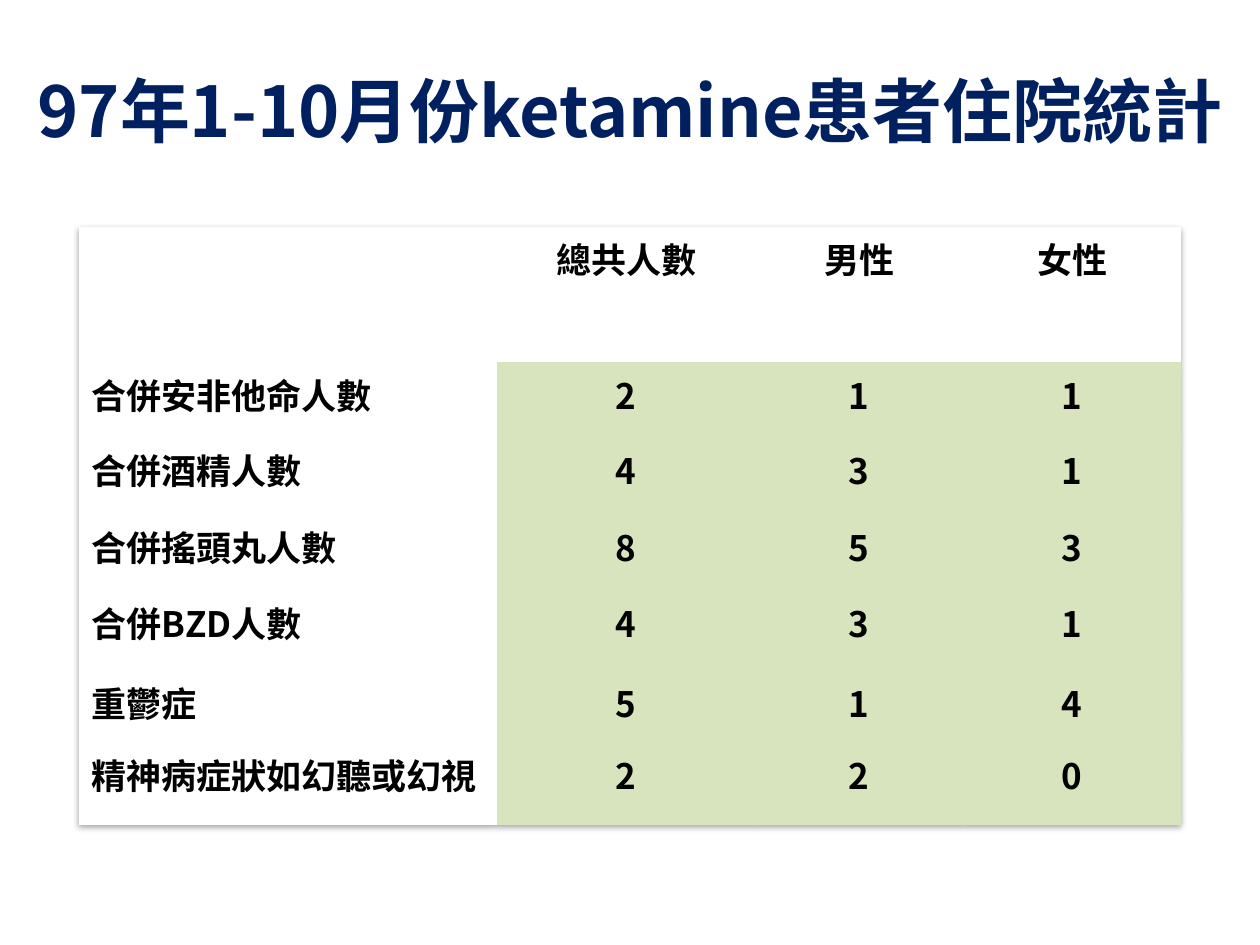
from lxml import etree
from pptx import Presentation
from pptx.dml.color import RGBColor
from pptx.enum.text import MSO_ANCHOR, PP_ALIGN
from pptx.oxml import parse_xml
from pptx.oxml.ns import nsdecls, qn
from pptx.util import Pt

CENTER, LEFT = PP_ALIGN.CENTER, PP_ALIGN.LEFT
MIDDLE = MSO_ANCHOR.MIDDLE
FONT = "Noto Sans CJK SC"
NAVY, BLACK, WHITE, GREEN = "002060", "000000", "FFFFFF", "D7E4BD"
COLUMN_WIDTHS = [239, 147.6, 118.8, 124.6]
ROW_HEIGHTS = [77.4, 43.2, 43.9, 43.2, 46.1, 41, 46.8]
STATISTICS = [
    ["", "總共人數", "男性", "女性"],
    ["合併安非他命人數", "2", "1", "1"],
    ["合併酒精人數", "4", "3", "1"],
    ["合併搖頭丸人數", "8", "5", "3"],
    ["合併BZD人數", "4", "3", "1"],
    ["重鬱症", "5", "1", "4"],
    ["精神病症狀如幻聽或幻視", "2", "2", "0"],
]


def color(value):
    """Turn a hex string into a colour."""
    return RGBColor.from_string(value)


def write(para, text, size, shade, align):
    """Write bold text in the slide font, for Latin and East Asian letters."""
    para.text = text
    para.alignment = align
    font = para.font
    font.name, font.size, font.bold = FONT, Pt(size), True
    font.color.rgb = color(shade)
    latin = para._p.pPr.find(qn("a:defRPr")).find(qn("a:latin"))
    east_asian = etree.Element(qn("a:ea"), typeface=FONT)
    latin.addnext(east_asian)


def add_title(page, text):
    """Add the centred title across the full slide width."""
    box = page.shapes.add_textbox(Pt(0), Pt(21.6), Pt(720), Pt(90))
    frame = box.text_frame
    frame.word_wrap = True
    frame.vertical_anchor = MIDDLE
    para = frame.paragraphs[0]
    para.line_spacing = 0.83
    write(para, text, 40, NAVY, CENTER)


def add_shadow(table):
    """Give the table a soft shadow below it."""
    shadow = parse_xml(
        f'<a:effectLst {nsdecls("a")}>'
        '<a:outerShdw blurRad="40000" dist="23000" dir="5400000" rotWithShape="0">'
        '<a:srgbClr val="000000"><a:alpha val="35000"/></a:srgbClr>'
        '</a:outerShdw></a:effectLst>'
    )
    table._tbl.tblPr.insert(0, shadow)


def add_statistics(page, rows):
    """Add the table with white headings and green figures."""
    table = page.shapes.add_table(
        len(rows), len(rows[0]), Pt(45), Pt(129.6),
        Pt(sum(COLUMN_WIDTHS)), Pt(sum(ROW_HEIGHTS)),
    ).table
    for column, width in zip(table.columns, COLUMN_WIDTHS):
        column.width = Pt(width)
    for row, height in zip(table.rows, ROW_HEIGHTS):
        row.height = Pt(height)
    for i, values in enumerate(rows):
        for j, value in enumerate(values):
            cell = table.cell(i, j)
            cell.fill.solid()
            cell.fill.fore_color.rgb = color(GREEN if i and j else WHITE)
            write(cell.text_frame.paragraphs[0], value, 20, BLACK, CENTER if j else LEFT)
    table.first_row = table.horz_banding = False
    style = table._tbl.tblPr.find(qn("a:tableStyleId"))
    style.text = "{2D5ABB26-0587-4C30-8999-92F81FD0307C}"
    add_shadow(table)


def main():
    """Build the slide and save it."""
    deck = Presentation()
    deck.slide_width, deck.slide_height = Pt(720), Pt(540)
    page = deck.slides.add_slide(deck.slide_layouts[6])
    add_title(page, "97年1-10月份ketamine患者住院統計")
    add_statistics(page, STATISTICS)
    deck.save("out.pptx")


if __name__ == "__main__":
    main()
